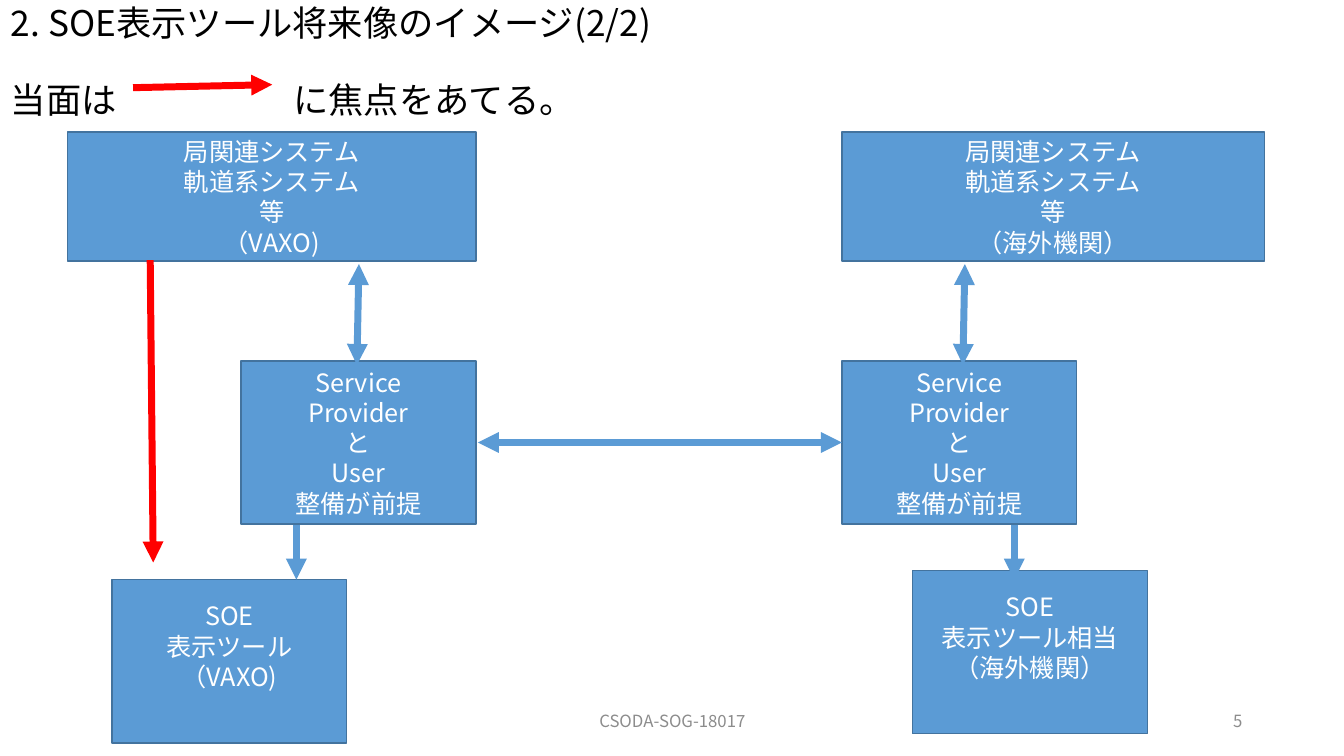
from dataclasses import dataclass

from lxml import etree
from pptx import Presentation
from pptx.dml.color import RGBColor
from pptx.enum.shapes import MSO_CONNECTOR, MSO_SHAPE
from pptx.enum.text import MSO_ANCHOR, PP_ALIGN
from pptx.oxml.ns import qn
from pptx.util import Pt

PX = 9144  # EMU per px, 100 px to the inch
FONT = "Noto Sans CJK JP"
COLORS = {
    "box": "5B9BD5",
    "border": "43739E",
    "focus": "FF0000",
    "title": "000000",
    "box_text": "FFFFFF",
    "footer": "8C8C8C",
}
RECT = MSO_SHAPE.RECTANGLE
STRAIGHT = MSO_CONNECTOR.STRAIGHT
MIDDLE = MSO_ANCHOR.MIDDLE
LEFT, CENTER, RIGHT = PP_ALIGN.LEFT, PP_ALIGN.CENTER, PP_ALIGN.RIGHT

SYSTEM_TOP, SYSTEM_H = 131, 128
PROVIDER_TOP = 358
NODE_W, NODE_H = 233, 162
PROVIDER_LEFTS = (239, 835)
PROVIDER_TEXT = "Service\nProvider\nと\nUser\n整備が前提"
SYSTEM_TEXT = "局関連システム\n軌道系システム\n等\n"
HOME_AGENCY = "（VAXO)"
OVERSEAS_AGENCY = "（海外機関）"
TOOL_BOTTOM_INSET = 35


@dataclass(frozen=True)
class Box:
    text: str
    left: int
    top: int
    width: int = NODE_W
    height: int = NODE_H
    bottom_inset: int = 5


@dataclass(frozen=True)
class Arrow:
    x1: int
    y1: int
    x2: int
    y2: int
    color: str = "box"
    both_ends: bool = False


@dataclass(frozen=True)
class Label:
    text: str
    left: int
    top: int
    width: int
    height: int
    size: float
    color: str
    align: PP_ALIGN


BOXES = [
    Box(SYSTEM_TEXT + HOME_AGENCY, 67, SYSTEM_TOP, 405, SYSTEM_H),
    Box(SYSTEM_TEXT + OVERSEAS_AGENCY, 835, SYSTEM_TOP, 419, SYSTEM_H),
    *(Box(PROVIDER_TEXT, left, PROVIDER_TOP) for left in PROVIDER_LEFTS),
    Box("SOE\n表示ツール\n" + HOME_AGENCY, 111, 575,
        bottom_inset=TOOL_BOTTOM_INSET),
    Box("SOE\n表示ツール相当\n" + OVERSEAS_AGENCY, 905, 566,
        bottom_inset=TOOL_BOTTOM_INSET),
]
ARROWS = [
    Arrow(149, 258, 152, 558, "focus"),
    Arrow(132, 87, 270, 84, "focus"),
    *(Arrow(x, 262, x - 2, 362, both_ends=True) for x in (356, 957)),
    Arrow(835, 439, 474, 439, both_ends=True),
    *(Arrow(x, 521, x, 575) for x in (294, 1006)),
]
TITLE = Label("2. SOE表示ツール将来像のイメージ(2/2)\n当面は\tに焦点をあてる。",
              1, -5, 1150, 136, 25.2, "title", LEFT)
FOOTERS = [
    Label("CSODA-SOG-18017", 442, 695, 450, 40, 12, "footer", CENTER),
    Label("5", 942, 695, 300, 40, 12, "footer", RIGHT),
]


def rgb(name: str) -> RGBColor:
    return RGBColor.from_string(COLORS[name])


def write_text(tf, text: str, size: float, color: str, align: PP_ALIGN) -> None:
    tf.word_wrap = True
    tf.vertical_anchor = MIDDLE
    tf.text = text
    for p in tf.paragraphs:
        p.alignment = align
        for r in p.runs:
            r.font.size = Pt(size)
            r.font.color.rgb = rgb(color)
            r.font.name = FONT
            etree.SubElement(r.font._element, qn("a:ea"), typeface=FONT)


def add_box(s, box: Box) -> None:
    sp = s.shapes.add_shape(RECT, box.left * PX, box.top * PX,
                            box.width * PX, box.height * PX)
    sp.shadow.inherit = False
    sp.fill.solid()
    sp.fill.fore_color.rgb = rgb("box")
    sp.line.color.rgb = rgb("border")
    sp.line.width = Pt(1)
    write_text(sp.text_frame, box.text, 18, "box_text", CENTER)
    sp.text_frame.margin_bottom = box.bottom_inset * PX


def add_arrow(s, arrow: Arrow) -> None:
    cxn = s.shapes.add_connector(STRAIGHT, arrow.x1 * PX, arrow.y1 * PX,
                                 arrow.x2 * PX, arrow.y2 * PX)
    cxn.line.color.rgb = rgb(arrow.color)
    cxn.line.width = Pt(5)
    ln = cxn.line._get_or_add_ln()
    for end in ("a:headEnd", "a:tailEnd") if arrow.both_ends else ("a:tailEnd",):
        etree.SubElement(ln, qn(end), type="triangle")
    etree.SubElement(cxn._element.spPr, qn("a:effectLst"))


def add_label(s, label: Label):
    sp = s.shapes.add_textbox(label.left * PX, label.top * PX,
                              label.width * PX, label.height * PX)
    write_text(sp.text_frame, label.text, label.size, label.color, label.align)
    return sp.text_frame


def add_title(s) -> None:
    """Add the heading and the focus line, whose tab leaves room for the red arrow."""
    tf = add_label(s, TITLE)
    for p in tf.paragraphs:
        p.line_spacing = 0.9
    focus = tf.paragraphs[1]
    focus.space_before = Pt(28)
    tabs = etree.SubElement(focus._p.get_or_add_pPr(), qn("a:tabLst"))
    etree.SubElement(tabs, qn("a:tab"), pos=str(280 * PX), algn="l")


def main() -> None:
    prs = Presentation()
    prs.slide_width, prs.slide_height = 1333 * PX, 750 * PX
    s = prs.slides.add_slide(prs.slide_layouts[6])
    add_title(s)
    for box in BOXES:
        add_box(s, box)
    for arrow in ARROWS:
        add_arrow(s, arrow)
    for footer in FOOTERS:
        add_label(s, footer)
    prs.save("out.pptx")


if __name__ == "__main__":
    main()
